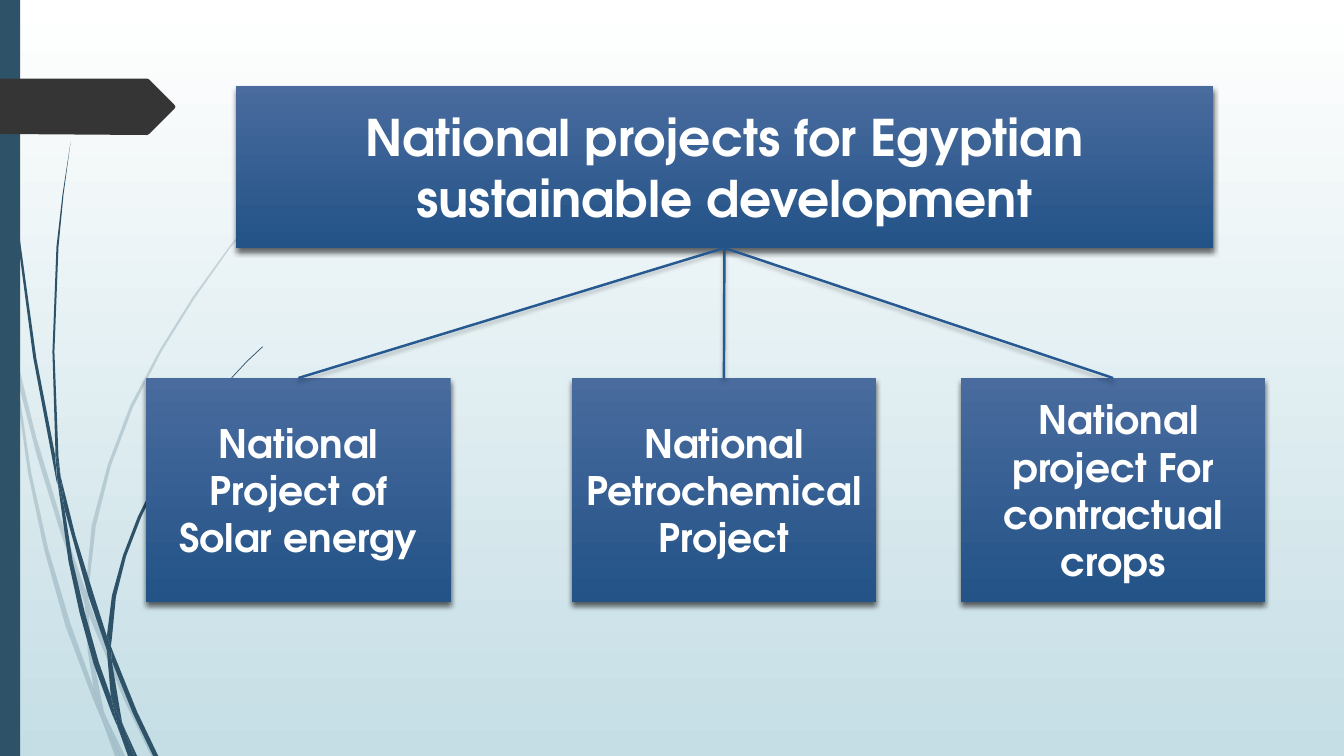
import pptx
import pptx.dml.color
import pptx.enum.shapes
import pptx.enum.text
import pptx.oxml
import pptx.oxml.ns
import pptx.util
from lxml import etree

Inches = pptx.util.Inches
RGBColor = pptx.dml.color.RGBColor
qn = pptx.oxml.ns.qn

WHITE = RGBColor(0xFF, 0xFF, 0xFF)
BLACK = RGBColor(0x00, 0x00, 0x00)
PALE_TEAL = RGBColor(0xC5, 0xDE, 0xE5)
TEAL = RGBColor(0x2E, 0x53, 0x69)
CHARCOAL = RGBColor(0x35, 0x35, 0x35)
BOX_TOP = RGBColor(0x49, 0x6B, 0x9E)
BOX_BOTTOM = RGBColor(0x23, 0x53, 0x87)
LINE_BLUE = RGBColor(0x26, 0x59, 0x91)

PALE_WISPS = [
    [(0.11, 3.5), (0.09, 3.22), (0, 2.82), (0, 2.99), (0.1, 3.44)],
    [(0.58, 5.22), (0.84, 5.99), (0.85, 5.86), (0.62, 5.2), (0.36, 4.34),
     (0.14, 3.45), (0.17, 3.76), (0.36, 4.5)],
    [(0.92, 6.07), (0.88, 5.96), (0.88, 6.1), (1.23, 6.94), (1.5, 7.5),
     (1.55, 7.5), (1.27, 6.92)],
    [(1.19, 7.5), (1.24, 7.5), (1.05, 7.11)],
    [(0.93, 6.83), (0.7, 6.19), (0.48, 5.45), (0.31, 4.69), (0.17, 3.76),
     (0.11, 3.5), (0.28, 4.7), (0.44, 5.46), (0.65, 6.21), (0.92, 6.93),
     (1.01, 7.14), (0.99, 7.07)],
    [(0.84, 5.99), (0.87, 6.46), (0.93, 6.83), (0.96, 6.92), (1.05, 7.11),
     (1.03, 7.06), (0.91, 6.46), (0.88, 6.1), (0.88, 6.08)],
    [(0.88, 5.84), (0.95, 5.22), (1.1, 4.62), (1.32, 4.04), (1.6, 3.49),
     (1.93, 2.96), (2.29, 2.45), (2.68, 1.98), (2.9, 1.75), (3.12, 1.54),
     (3.12, 1.53), (2.89, 1.75), (2.68, 1.97), (2.28, 2.44), (1.91, 2.95),
     (1.58, 3.48), (1.29, 4.03), (1.07, 4.61), (0.91, 5.21), (0.85, 5.84),
     (0.85, 5.86), (0.88, 5.96)],
    [(1.01, 7.14), (1.14, 7.5), (1.19, 7.5)],
    [(0.88, 6.08), (0.88, 6.1), (0.88, 5.96), (0.85, 5.86), (0.84, 5.99)],
    [(0.96, 6.92), (0.93, 6.83), (0.99, 7.07), (1.01, 7.14), (1.19, 7.5),
     (1.05, 7.11)],
]
DARK_WISPS = [
    [(0.07, 1.1), (0.17, 2.33), (0.33, 3.55), (0.56, 4.77), (0.57, 4.81),
     (0.55, 4.57), (0.55, 4.53), (0.36, 3.55), (0.19, 2.32), (0.08, 1.09),
     (0.05, 0.48), (0.04, 0), (0.03, 0), (0.04, 0.48)],
    [(0.88, 5.92), (1.06, 6.45), (1.06, 6.33), (1.06, 6.31), (0.93, 5.9),
     (0.75, 5.32), (0.6, 4.72), (0.64, 5.05)],
    [(1.13, 6.49), (1.1, 6.41), (1.11, 6.56), (1.32, 7.08), (1.52, 7.5),
     (1.57, 7.5), (1.36, 7.06)],
    [(1.1, 6.91), (0.98, 6.57), (0.84, 6.07), (0.72, 5.56), (0.64, 5.05),
     (0.57, 4.77), (0.68, 5.57), (0.79, 6.08), (0.93, 6.59), (1.11, 7.08),
     (1.17, 7.22), (1.16, 7.17)],
    [(0.6, 4.72), (0.58, 4.53), (0.54, 3.49), (0.58, 2.45), (0.63, 1.93),
     (0.7, 1.41), (0.62, 1.93), (0.56, 2.45), (0.52, 3.49), (0.55, 4.49)],
    [(1.33, 7.5), (1.36, 7.5), (1.22, 7.19)],
    [(0.57, 4.77), (0.64, 5.05), (0.6, 4.72), (0.55, 4.49), (0.55, 4.53)],
    [(1.11, 6.33), (1.15, 5.92), (1.25, 5.52), (1.4, 5.13), (1.58, 4.76),
     (1.8, 4.4), (2.05, 4.06), (2.31, 3.74), (2.45, 3.59), (2.61, 3.44),
     (2.6, 3.44), (2.45, 3.58), (2.31, 3.73), (2.04, 4.05), (1.79, 4.39),
     (1.56, 4.74), (1.37, 5.12), (1.22, 5.51), (1.11, 5.91), (1.06, 6.31),
     (1.1, 6.41)],
    [(1.17, 7.22), (1.27, 7.5), (1.31, 7.5)],
    [(1.06, 6.45), (1.1, 6.91), (1.16, 7.06), (1.22, 7.19), (1.21, 7.16),
     (1.11, 6.56), (1.09, 6.51)],
    [(1.06, 6.45), (1.09, 6.51), (1.11, 6.56), (1.1, 6.41), (1.06, 6.31),
     (1.06, 6.33)],
    [(1.16, 7.06), (1.1, 6.91), (1.16, 7.17), (1.17, 7.22), (1.3, 7.5),
     (1.33, 7.5), (1.22, 7.19)],
]
PAGE_TAG = [(0, 0.78), (1.46, 0.78), (1.48, 0.79), (1.73, 1.04), (1.74, 1.06),
            (1.73, 1.08), (1.48, 1.33), (1.46, 1.34), (0, 1.33)]
PROJECTS = [
    (1.45, ["National Project of", "Solar energy"]),
    (5.67, ["National Petrochemical Project"]),
    (9.53, [" National project For contractual crops"]),
]


class SlideBuilder:
    font = {"name": "TeX Gyre Adventor", "bold": True}

    def __init__(self, prs):
        self.s = prs.slides.add_slide(prs.slide_layouts[6])

    def gradient(self, fill, colors):
        fill.gradient()
        fill.gradient_angle = 270
        for stop, color in zip(fill.gradient_stops, colors):
            stop.color.rgb = color

    def shadow(self, sp, opacity, blur, distance):
        spPr = sp._element.spPr
        for old in spPr.findall(qn("a:effectLst")):
            spPr.remove(old)
        effects = etree.SubElement(spPr, qn("a:effectLst"))
        outer = etree.SubElement(
            effects, qn("a:outerShdw"), blurRad=str(pptx.util.Pt(blur)),
            dist=str(pptx.util.Pt(distance)), dir="5400000", rotWithShape="0")
        color = etree.SubElement(outer, qn("a:srgbClr"), val=str(BLACK))
        etree.SubElement(color, qn("a:alpha"), val=str(opacity * 1000))

    def solid(self, sp, color, opacity=100):
        sp.shadow.inherit = False
        sp.line.fill.background()
        sp.fill.solid()
        sp.fill.fore_color.rgb = color
        if opacity < 100:
            clr = sp._element.spPr.find(qn("a:solidFill")).find(qn("a:srgbClr"))
            etree.SubElement(clr, qn("a:alpha"), val=str(opacity * 1000))

    def outline(self, points, color, opacity=100):
        points = [(Inches(x), Inches(y)) for x, y in points]
        builder = self.s.shapes.build_freeform(*points[0])
        builder.add_line_segments(points[1:], close=True)
        self.solid(builder.convert_to_shape(), color, opacity)

    def rect(self, x, y, w, h):
        return self.s.shapes.add_shape(
            pptx.enum.shapes.MSO_SHAPE.RECTANGLE,
            Inches(x), Inches(y), Inches(w), Inches(h))

    def box(self, x, y, w, h, lines, size):
        sp = self.rect(x, y, w, h)
        self.gradient(sp.fill, (BOX_TOP, BOX_BOTTOM))
        sp.line.fill.background()
        self.shadow(sp, 60, 4, 3)
        tf = sp.text_frame
        tf.word_wrap = True
        tf.vertical_anchor = pptx.enum.text.MSO_ANCHOR.MIDDLE
        for i, line in enumerate(lines):
            p = tf.add_paragraph() if i else tf.paragraphs[0]
            p.alignment = pptx.enum.text.PP_ALIGN.CENTER
            r = p.add_run()
            r.text = line
            for key, value in {**self.font, "size": pptx.util.Pt(size)}.items():
                setattr(r.font, key, value)
            r.font.color.rgb = WHITE
        return sp

    def link(self, parent, child):
        c = self.s.shapes.add_connector(
            pptx.enum.shapes.MSO_CONNECTOR.STRAIGHT, 0, 0, 0, 0)
        c.begin_connect(parent, 2)
        c.end_connect(child, 0)
        c.line.color.rgb = LINE_BLUE
        c.line.width = pptx.util.Pt(1.75)
        self.shadow(c, 25, 3, 2)


def main():
    prs = pptx.Presentation()
    prs.slide_width, prs.slide_height = Inches(13.33), Inches(7.5)
    slide = SlideBuilder(prs)
    slide.gradient(slide.s.background.fill, (WHITE, PALE_TEAL))
    for wisps, opacity in ((PALE_WISPS, 20), (DARK_WISPS, 100)):
        for points in wisps:
            slide.outline(points, TEAL, opacity)
    slide.solid(slide.rect(0, 0, 0.2, 7.5), TEAL)
    slide.outline(PAGE_TAG, CHARCOAL)

    title = slide.box(2.34, 0.85, 9.69, 1.61,
                      ["National projects for Egyptian sustainable development"], 36)
    boxes = [slide.box(x, 3.75, 3.02, 2.22, lines, 28) for x, lines in PROJECTS]
    for box in reversed(boxes):
        slide.link(title, box)
    prs.save("out.pptx")


if __name__ == "__main__":
    main()
